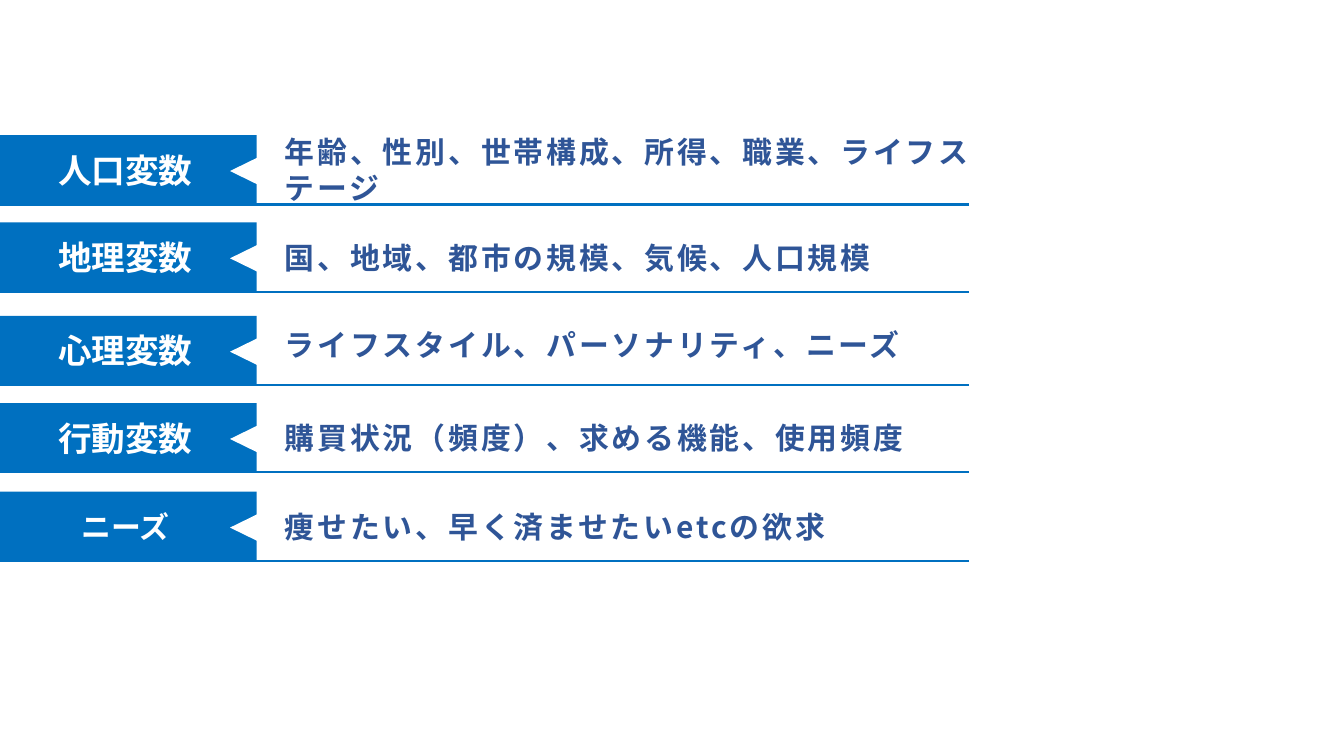
from pptx import Presentation
from pptx.dml.color import RGBColor
from pptx.enum import lang, shapes, text
from pptx.oxml.ns import qn
from pptx.util import Cm, Pt
from lxml import etree

FONT = "Noto Sans CJK JP"
BLUE, NAVY, WHITE = "0070C0", "2F5597", "FFFFFF"
LEFT, LABEL_WIDTH, ROW_HEIGHT = -0.23, 9.93, 2.62
TEXT_LEFT, TEXT_WIDTH, RULE_RIGHT = 10.62, 27.53, 36.63
NOTCH_LEFT, NOTCH_DROP, NOTCH_WIDTH, NOTCH_HEIGHT = 8.71, 0.63, 1.42, 1.45

# label, label size, description, top of the label, top of the description
ROWS = [
    ("人口変数", 36, "年齢、性別、世帯構成、所得、職業、ライフステージ", 5.11, 5.11),
    ("地理変数", 36, "国、地域、都市の規模、気候、人口規模", 8.41, 8.43),
    ("心理変数", 36, "ライフスタイル、パーソナリティ、ニーズ", 11.94, 11.73),
    ("行動変数", 36, "購買状況（頻度）、求める機能、使用頻度", 15.24, 15.24),
    ("ニーズ", 32, "痩せたい、早く済ませたいetcの欲求", 18.59, 18.59),
]


def rgb(color):
    return RGBColor.from_string(color)


def add_block(group, kind, left, top, width, height, fill):
    """Add a filled preset shape without outline or shadow."""
    sp = group.shapes.add_shape(kind, Cm(left), Cm(top), Cm(width), Cm(height))
    sp.shadow.inherit = False
    sp.fill.solid()
    sp.fill.fore_color.rgb = rgb(fill)
    sp.line.fill.background()
    return sp


def write(sp, content, size, color, align, spacing=0):
    """Put one bold line of text in a shape; spacing is in points."""
    tf = sp.text_frame
    tf.word_wrap = True
    tf.vertical_anchor = text.MSO_ANCHOR.MIDDLE
    p = tf.paragraphs[0]
    p.text = content
    p.alignment = align
    r = p.runs[0]
    r.font.name = FONT
    r.font.size = Pt(size)
    r.font.bold = True
    r.font.color.rgb = rgb(color)
    r.font.language_id = lang.MSO_LANGUAGE_ID.JAPANESE
    props = r.font._element
    etree.SubElement(props, qn("a:ea")).set("typeface", FONT)
    if spacing:
        props.set("spc", str(spacing * 100))


def add_label(group, content, size, top):
    sp = add_block(group, shapes.MSO_SHAPE.RECTANGLE, LEFT, top,
                   LABEL_WIDTH, ROW_HEIGHT, BLUE)
    write(sp, content, size, WHITE, text.PP_ALIGN.CENTER)


def add_description(group, content, top):
    sp = add_block(group, shapes.MSO_SHAPE.RECTANGLE, TEXT_LEFT, top,
                   TEXT_WIDTH, ROW_HEIGHT, WHITE)
    write(sp, content, 32, NAVY, text.PP_ALIGN.LEFT, spacing=3)
    tf = sp.text_frame
    tf.margin_left = tf.margin_right = tf.margin_top = tf.margin_bottom = Cm(0.15)
    tf.paragraphs[0].space_after = Pt(6)


def add_rule(group, y):
    line = group.shapes.add_connector(
        shapes.MSO_CONNECTOR.STRAIGHT, Cm(RULE_RIGHT), Cm(y), Cm(LEFT), Cm(y))
    line.line.color.rgb = rgb(BLUE)
    line.line.width = Pt(2.25)
    etree.SubElement(line._element.spPr, qn("a:effectLst"))


def add_notch(group, top):
    """Add the white triangle that cuts into the right edge of a label."""
    sp = add_block(group, shapes.MSO_SHAPE.ISOSCELES_TRIANGLE, NOTCH_LEFT,
                   top + NOTCH_DROP, NOTCH_WIDTH, NOTCH_HEIGHT, WHITE)
    sp.rotation = 270


def main():
    prs = Presentation()
    prs.slide_width, prs.slide_height = Cm(50.8), Cm(28.58)
    s = prs.slides.add_slide(prs.slide_layouts[6])
    for label, size, description, top, text_top in ROWS:
        group = s.shapes.add_group_shape()
        add_label(group, label, size, top)
        add_description(group, description, text_top)
        add_rule(group, top + ROW_HEIGHT)
        add_notch(group, top)
    prs.save("out.pptx")


if __name__ == "__main__":
    main()
